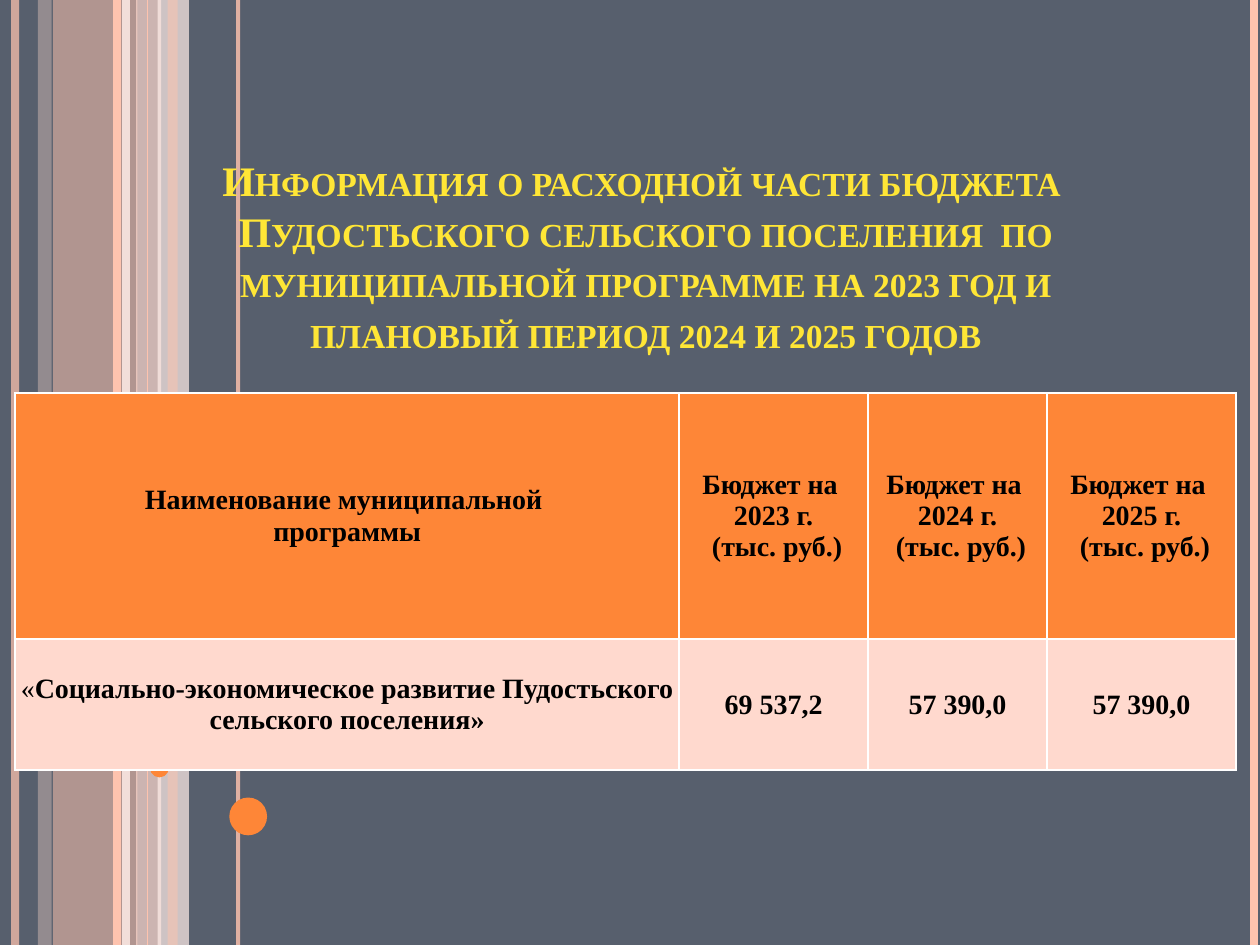
import dataclasses

import pptx
import pptx.dml.color
import pptx.enum.shapes
import pptx.enum.text
import pptx.oxml
import pptx.oxml.ns
import pptx.util
from pptx.util import Inches, Pt


@dataclasses.dataclass(frozen=True)
class Theme:
    background: str = "575F6D"
    peach: str = "FEC3AE"
    pale: str = "FFD9CE"
    cream: str = "FFEDE8"
    orange: str = "FE8637"
    title: str = "FFE636"
    text: str = "000000"
    border: str = "FFFFFF"
    font: str = "Times New Roman"
    title_size: int = 24
    table_size: int = 16


THEME = Theme()

# left, width, colour, opacity in percent
BANDS = [
    (0.42, 0.67, THEME.peach, 54),
    (0.3, 0.11, THEME.pale, 36),
    (1.08, 0.2, THEME.pale, 70),
    (1.25, 0.25, THEME.cream, 71),
]
NARROW_BAND = (1.33, 0.08, THEME.peach, 51)
# x, line width, colour, opacity in percent
STRIPES = [
    (0.12, 4.5, THEME.peach, 73),
    (1, 4.5, THEME.cream, 83),
    (0.93, 4.5, THEME.peach, 100),
    (1.89, 2.25, THEME.peach, 82),
    (1.17, 0.75, THEME.peach, 100),
    (9.95, 4.5, THEME.peach, 100),
]
# left, top, diameter
CIRCLES = [
    (0.67, 3.75, 1.42),
    (1.45, 5.32, 0.7),
    (1.19, 6.02, 0.15),
    (1.82, 6.33, 0.3),
    (2.05, 4.9, 0.4),
]

TITLE = (
    "Информация о расходной части бюджета \vПудостьского сельского поселения  по "
    "муниципальной программе на 2023 год и плановый период 2024 и 2025 годов"
)
HEADER = ["Наименование муниципальной \nпрограммы"] + [
    f"Бюджет на \v{year} г.\n (тыс. руб.)" for year in (2023, 2024, 2025)
]
PROGRAMME = [
    "«Социально-экономическое развитие Пудостьского сельского поселения»",
    "69 537,2",
    "57 390,0",
    "57 390,0",
]


def set_values(target, values):
    for name, value in values.items():
        setattr(target, name, value)


def paint(fill, color, opacity=100):
    fill.solid()
    fill.fore_color.rgb = pptx.dml.color.RGBColor.from_string(color)
    if opacity < 100:
        color_element = fill._xPr.find(".//" + pptx.oxml.ns.qn("a:srgbClr"))
        alpha = pptx.oxml.parse_xml(
            f'<a:alpha {pptx.oxml.ns.nsdecls("a")} val="{opacity * 1000}"/>'
        )
        color_element.append(alpha)


def format_paragraph(paragraph, size, color):
    paragraph.alignment = pptx.enum.text.PP_ALIGN.CENTER
    for run in paragraph.runs:
        set_values(run.font, {"name": THEME.font, "size": Pt(size), "bold": True})
        run.font.color.rgb = pptx.dml.color.RGBColor.from_string(color)


def add_filled_shape(slide, kind, box, color, opacity=100):
    shape = slide.shapes.add_shape(kind, *box)
    shape.shadow.inherit = False
    paint(shape.fill, color, opacity)
    shape.line.fill.background()


def add_stripe(slide, x, top, height, width, color, opacity):
    stripe = slide.shapes.add_connector(
        pptx.enum.shapes.MSO_CONNECTOR.STRAIGHT, x, top, x, top + height
    )
    stripe.line.width = Pt(width)
    paint(stripe.line.fill, color, opacity)
    stripe._element.spPr.append(
        pptx.oxml.parse_xml(f'<a:effectLst {pptx.oxml.ns.nsdecls("a")}/>')
    )


def add_decoration(slide, left, top, height):
    """Draw the vertical bands, stripes and circles."""
    kinds = pptx.enum.shapes.MSO_SHAPE

    def add_band(x, width, color, opacity):
        box = (left + Inches(x), top, Inches(width), height)
        add_filled_shape(slide, kinds.RECTANGLE, box, color, opacity)

    for band in BANDS:
        add_band(*band)
    for x, width, color, opacity in STRIPES:
        add_stripe(slide, left + Inches(x), top, height, width, color, opacity)
    add_band(*NARROW_BAND)
    for x, y, diameter in CIRCLES:
        box = (left + Inches(x), top + Inches(y), Inches(diameter), Inches(diameter))
        add_filled_shape(slide, kinds.OVAL, box, THEME.orange)


def place_title(slide, left, top, width, height):
    title = slide.shapes.title
    set_values(title, {"left": left, "top": top, "width": width, "height": height})
    frame = title.text_frame
    frame.text = TITLE
    set_values(frame, {
        "word_wrap": True,
        "auto_size": pptx.enum.text.MSO_AUTO_SIZE.NONE,
        "vertical_anchor": pptx.enum.text.MSO_ANCHOR.BOTTOM,
    })
    paragraph = frame.paragraphs[0]
    format_paragraph(paragraph, THEME.title_size, THEME.title)
    for run in paragraph.runs:
        run.font._element.set("cap", "small")
    # bring the title in front of the decoration
    slide.shapes._spTree.append(title._element)


def add_borders(cell):
    properties = cell._tc.get_or_add_tcPr()
    for position, side in enumerate(("lnL", "lnR", "lnT", "lnB")):
        properties.insert(position, pptx.oxml.parse_xml(
            f'<a:{side} {pptx.oxml.ns.nsdecls("a")} w="{Pt(1)}"><a:solidFill>'
            f'<a:srgbClr val="{THEME.border}"/></a:solidFill></a:{side}>'
        ))


def fill_row(cells, texts, color, margins):
    for cell, text in zip(cells, texts):
        cell.text = text
        names = ("margin_left", "margin_top", "margin_right", "margin_bottom")
        set_values(cell, dict(zip(names, map(Inches, margins))))
        cell.vertical_anchor = pptx.enum.text.MSO_ANCHOR.MIDDLE
        paint(cell.fill, color)
        add_borders(cell)
        for paragraph in cell.text_frame.paragraphs:
            format_paragraph(paragraph, THEME.table_size, THEME.text)


def add_budget_table(slide, left, top, width, height):
    table = slide.shapes.add_table(2, 4, left, top, width, height).table
    for column, column_width in zip(table.columns, (5.27, 1.5, 1.42, 1.5)):
        column.width = Inches(column_width)
    for row, row_height in zip(table.rows, (1.95, 1.04)):
        row.height = Inches(row_height)
    header, programme = table.rows
    fill_row(header.cells, HEADER, THEME.orange, (0.07, 0.04, 0.07, 0.04))
    fill_row(programme.cells, PROGRAMME, THEME.pale, (0.01, 0.01, 0.01, 0))

    # the opening quotation mark is not bold
    paragraph = programme.cells[0].text_frame.paragraphs[0]
    quote = paragraph.runs[0]
    name = paragraph.add_run()
    quote.text, name.text = quote.text[:1], quote.text[1:]
    format_paragraph(paragraph, THEME.table_size, THEME.text)
    quote.font.bold = False


def main():
    presentation = pptx.Presentation()
    presentation.slide_width = Inches(10)
    presentation.slide_height = Inches(7.5)
    slide = presentation.slides.add_slide(presentation.slide_layouts[5])
    paint(slide.background.fill, THEME.background)
    add_decoration(slide, 0, 0, presentation.slide_height)
    place_title(slide, Inches(1.58), Inches(0.68), Inches(7.09), Inches(2.2))
    add_budget_table(slide, Inches(0.12), Inches(3.12), Inches(9.69), Inches(2.99))
    presentation.save("out.pptx")


if __name__ == "__main__":
    main()
